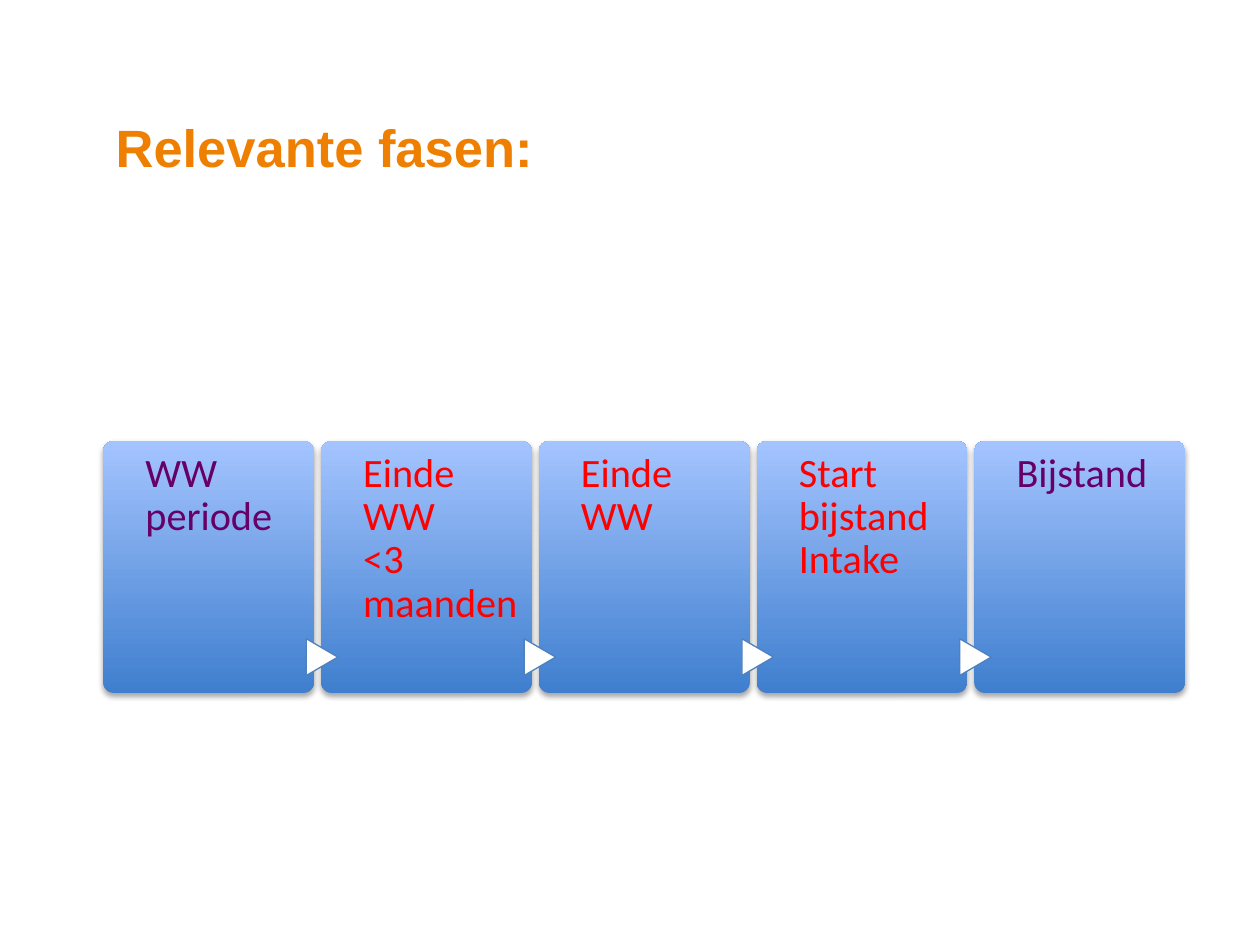
import pptx
import pptx.util
import pptx.dml.color
import pptx.enum.shapes
import pptx.enum.text
import pptx.oxml.ns
import lxml.etree

Pt = pptx.util.Pt
SHAPES = pptx.enum.shapes.MSO_SHAPE
ANCHORS = pptx.enum.text.MSO_ANCHOR

COLORS = {
    "title": "EE7F00",
    "card_bottom": "3F7FCE",
    "card_top": "A4C4FF",
    "arrow": "FFFFFF",
    "arrow_line": "4F81BD",
    "shadow": "000000",
    "calm": "660066",
    "urgent": "FF0000",
}


def rgb(name):
    return pptx.dml.color.RGBColor.from_string(COLORS[name])


class PhaseSlide:
    title_font = "Arial"
    phase_font = "Calibri"

    def __init__(self, slide):
        self.slide = slide

    def text(self, content, left, top, width, height, font, size, color,
             insets, anchor=ANCHORS.TOP, bold=False, spacing=1.0):
        box = self.slide.shapes.add_textbox(Pt(left), Pt(top), Pt(width), Pt(height))
        frame = box.text_frame
        frame.word_wrap = True
        frame.vertical_anchor = anchor
        (frame.margin_left, frame.margin_top,
         frame.margin_right, frame.margin_bottom) = map(Pt, insets)
        paragraph = frame.paragraphs[0]
        paragraph.text = content
        paragraph.line_spacing = spacing
        paragraph.font.name = font
        paragraph.font.size = Pt(size)
        paragraph.font.bold = bold
        paragraph.font.color.rgb = rgb(color)

    def title(self, content):
        self.text(content, 59, 34.5, 613.5, 70.5, self.title_font, 30, "title",
                  (7.2, 3.6, 7.2, 3.6), ANCHORS.BOTTOM, bold=True)

    def card(self, left, top, width, height):
        card = self.slide.shapes.add_shape(
            SHAPES.ROUNDED_RECTANGLE, Pt(left), Pt(top), Pt(width), Pt(height))
        card.adjustments[0] = 0.05
        card.fill.gradient()
        card.fill.gradient_angle = 90
        for stop, color in zip(card.fill.gradient_stops, ("card_bottom", "card_top")):
            stop.color.rgb = rgb(color)
        card.line.fill.background()
        self.soft_shadow(card)

    def soft_shadow(self, shape):
        qn = pptx.oxml.ns.qn
        shape.shadow.inherit = False
        effects = shape._element.spPr.find(qn("a:effectLst"))
        shadow = lxml.etree.SubElement(
            effects, qn("a:outerShdw"), blurRad=str(Pt(3.1)), dist=str(Pt(1.8)),
            dir="5400000", rotWithShape="0")
        color = lxml.etree.SubElement(shadow, qn("a:srgbClr"), val=COLORS["shadow"])
        lxml.etree.SubElement(color, qn("a:alpha"), val="35000")

    def arrow(self, left, top):
        arrow = self.slide.shapes.add_shape(
            SHAPES.FLOWCHART_EXTRACT, Pt(left), Pt(top), Pt(21), Pt(18))
        arrow.rotation = 90
        arrow.fill.solid()
        arrow.fill.fore_color.rgb = rgb("arrow")
        arrow.line.color.rgb = rgb("arrow_line")
        arrow.line.width = Pt(0.75)
        arrow.shadow.inherit = False

    def phase(self, label, color, left, top, follows):
        self.card(left, top, 120.5, 144)
        if follows:
            self.arrow(left - 9.9, top + 114.5)
        self.text(label, left + 24.1, top, 89.5, 144, self.phase_font, 23, color,
                  (0, 6.5, 0, 0), spacing=0.9)


def main():
    deck = pptx.Presentation()
    deck.slide_width, deck.slide_height = Pt(720), Pt(540)
    page = PhaseSlide(deck.slides.add_slide(deck.slide_layouts[6]))

    page.title("Relevante fasen:")

    # Phases from left to right, each joined to the one before it
    phases = [
        ("WW periode", "calm"),
        ("Einde WW\v<3 maanden", "urgent"),
        ("Einde WW", "urgent"),
        ("Start bijstand Intake", "urgent"),
        ("Bijstand", "calm"),
    ]
    for index, (label, color) in enumerate(phases):
        page.phase(label, color, 59 + 124.45 * index, 252, follows=index > 0)

    deck.save("out.pptx")


if __name__ == "__main__":
    main()
